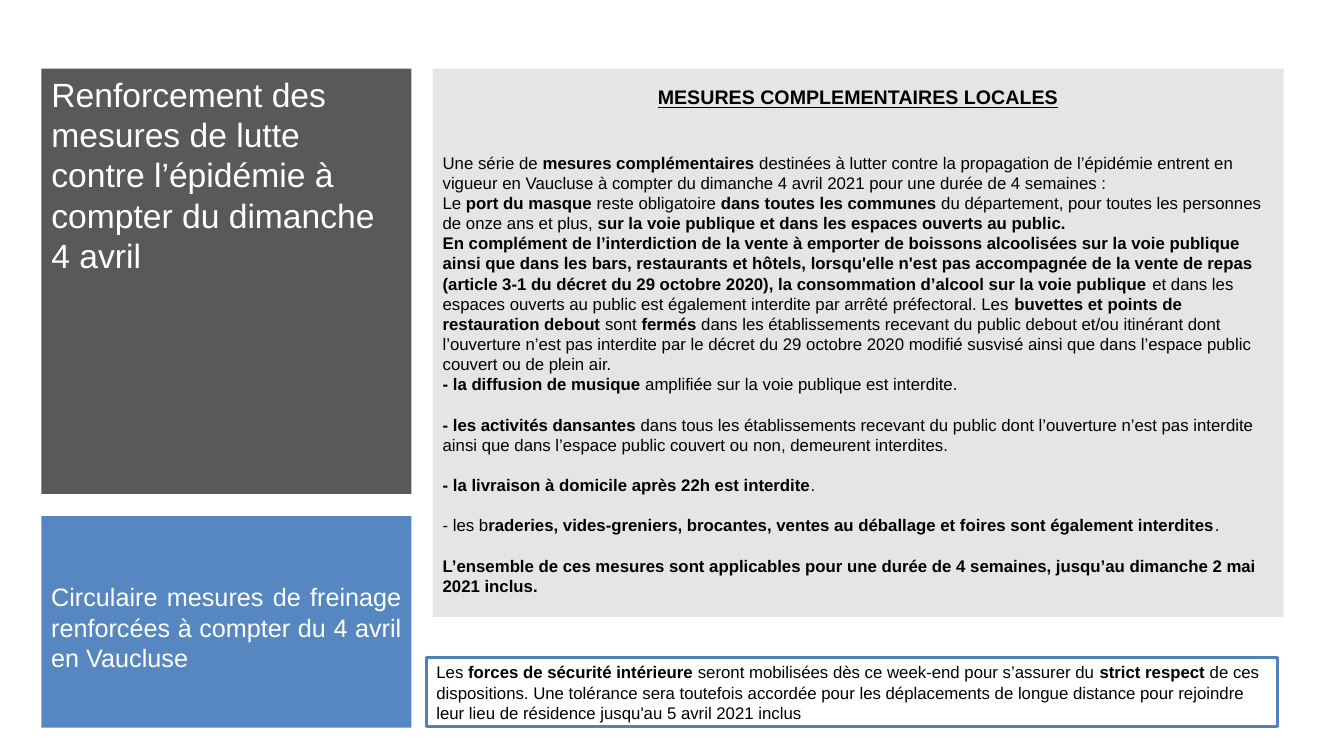
import pptx
import pptx.util
import pptx.dml.color
import pptx.enum.shapes
import pptx.enum.text
import pptx.oxml.ns
import lxml.etree

ALIGN = pptx.enum.text.PP_ALIGN
INCH = pptx.util.Inches
POINT = pptx.util.Pt
BLUE = "4F81BD"


def paint(fill, value):
    fill.solid()
    fill.fore_color.rgb = pptx.dml.color.RGBColor.from_string(value)


def write(box, texts, size, color, align=ALIGN.LEFT):
    frame = box.text_frame
    frame.word_wrap = True
    frame.auto_size = pptx.enum.text.MSO_AUTO_SIZE.NONE
    frame.vertical_anchor = pptx.enum.text.MSO_ANCHOR.TOP
    frame.margin_left = frame.margin_right = INCH(0.1)
    frame.margin_top = frame.margin_bottom = INCH(0.05)
    for index, text in enumerate(texts):
        para = frame.add_paragraph() if index else frame.paragraphs[0]
        para.alignment = align
        para.line_spacing = 1.0
        para.space_before = para.space_after = POINT(0)
        for part, words in enumerate(text.split("**")):
            if words:
                span = para.add_run()
                span.text = words
                span.font.name = "Arial"
                span.font.size = POINT(size)
                span.font.bold = part % 2 == 1
                paint(span.font.fill, color)


deck = pptx.Presentation()
deck.slide_width, deck.slide_height = INCH(13.33), INCH(7.5)
page = deck.slides.add_slide(deck.slide_layouts[1])
rectangle = pptx.enum.shapes.MSO_SHAPE.RECTANGLE

left_column, left_width = 0.41, 3.67
right_column, right_width = 4.29, 8.44
top_row, bottom_row = 0.68, 5.12

title = page.shapes.title
measures = page.placeholders[1]
circular = page.shapes.add_shape(rectangle, 0, 0, 0, 0)
forces = page.shapes.add_shape(rectangle, 0, 0, 0, 0)

for box, left, top, width, height, color, opacity in [
    (title, left_column, top_row, left_width, 4.22, "595959", 100),
    (circular, left_column, bottom_row, left_width, 2.1, BLUE, 95),
    (measures, right_column, top_row, right_width, 5.44, "808080", 20),
    (forces, right_column - 0.06, 6.52, right_width, 0.69, "FFFFFF", 100),
]:
    box.left, box.top = INCH(left), INCH(top)
    box.width, box.height = INCH(width), INCH(height)
    paint(box.fill, color)
    box.line.fill.background()
    if opacity < 100:
        tint = box.element.spPr.find(".//" + pptx.oxml.ns.qn("a:srgbClr"))
        alpha = lxml.etree.SubElement(tint, pptx.oxml.ns.qn("a:alpha"))
        alpha.set("val", str(opacity * 1000))

for box in (circular, forces):
    box.shadow.inherit = False
paint(forces.line.fill, BLUE)
forces.line.width = POINT(2)

write(title, ["Renforcement des mesures de lutte contre l’épidémie à compter du dimanche 4 avril"], 24, "FFFFFF")
write(circular, ["Circulaire mesures de freinage renforcées à compter du 4 avril en Vaucluse"], 18, "FFFFFF", ALIGN.JUSTIFY)
circular.text_frame.margin_top = INCH(0.65)

write(measures, [
    "**MESURES COMPLEMENTAIRES LOCALES**",
    "Une série de **mesures complémentaires** destinées à lutter contre la propagation de l’épidémie "
    "entrent en vigueur en Vaucluse à compter du dimanche 4 avril 2021 pour une durée de 4 semaines :",
    "Le **port du masque** reste obligatoire **dans toutes les communes** du département, pour toutes "
    "les personnes de onze ans et plus, **sur la voie publique et dans les espaces ouverts au public.**",
    "**En complément de l’interdiction de la vente à emporter de boissons alcoolisées sur la voie "
    "publique ainsi que dans les bars, restaurants et hôtels, lorsqu'elle n'est pas accompagnée de la "
    "vente de repas (article 3-1 du décret du 29 octobre 2020), la consommation d’alcool sur la voie "
    "publique** et dans les espaces ouverts au public est également interdite par arrêté préfectoral. "
    "Les **buvettes et points de restauration debout** sont **fermés** dans les établissements recevant "
    "du public debout et/ou itinérant dont l’ouverture n’est pas interdite par le décret du 29 octobre "
    "2020 modifié susvisé ainsi que dans l’espace public couvert ou de plein air.",
    "**- la diffusion de musique** amplifiée sur la voie publique est interdite.",
    "**- les activités dansantes** dans tous les établissements recevant du public dont l’ouverture "
    "n’est pas interdite ainsi que dans l’espace public couvert ou non, demeurent interdites.",
    "**- la livraison à domicile après 22h est interdite**.",
    "- les b**raderies, vides-greniers, brocantes, ventes au déballage et foires sont également interdites**.",
    "**L’ensemble de ces mesures sont applicables pour une durée de 4 semaines, jusqu’au dimanche 2 mai 2021 inclus.**",
], 12, "000000")

paragraphs = measures.text_frame.paragraphs
heading = paragraphs[0]
heading.alignment = ALIGN.CENTER
heading.line_spacing = 1.5
heading.runs[0].font.size = POINT(14)
heading.runs[0].font.underline = True
paragraphs[1].space_before = POINT(31)
for para in paragraphs[5:]:
    para.space_before = POINT(14.4)
for para in paragraphs:
    settings = para._p.get_or_add_pPr()
    settings.set("marL", "0")
    settings.set("indent", "0")
    lxml.etree.SubElement(settings, pptx.oxml.ns.qn("a:buNone"))

write(forces, [
    "Les **forces de sécurité intérieure** seront mobilisées dès ce week-end pour s’assurer du "
    "**strict respect** de ces dispositions. Une tolérance sera toutefois accordée pour les déplacements "
    "de longue distance pour rejoindre leur lieu de résidence jusqu'au 5 avril 2021 inclus",
], 12, "000000")

deck.save("out.pptx")
